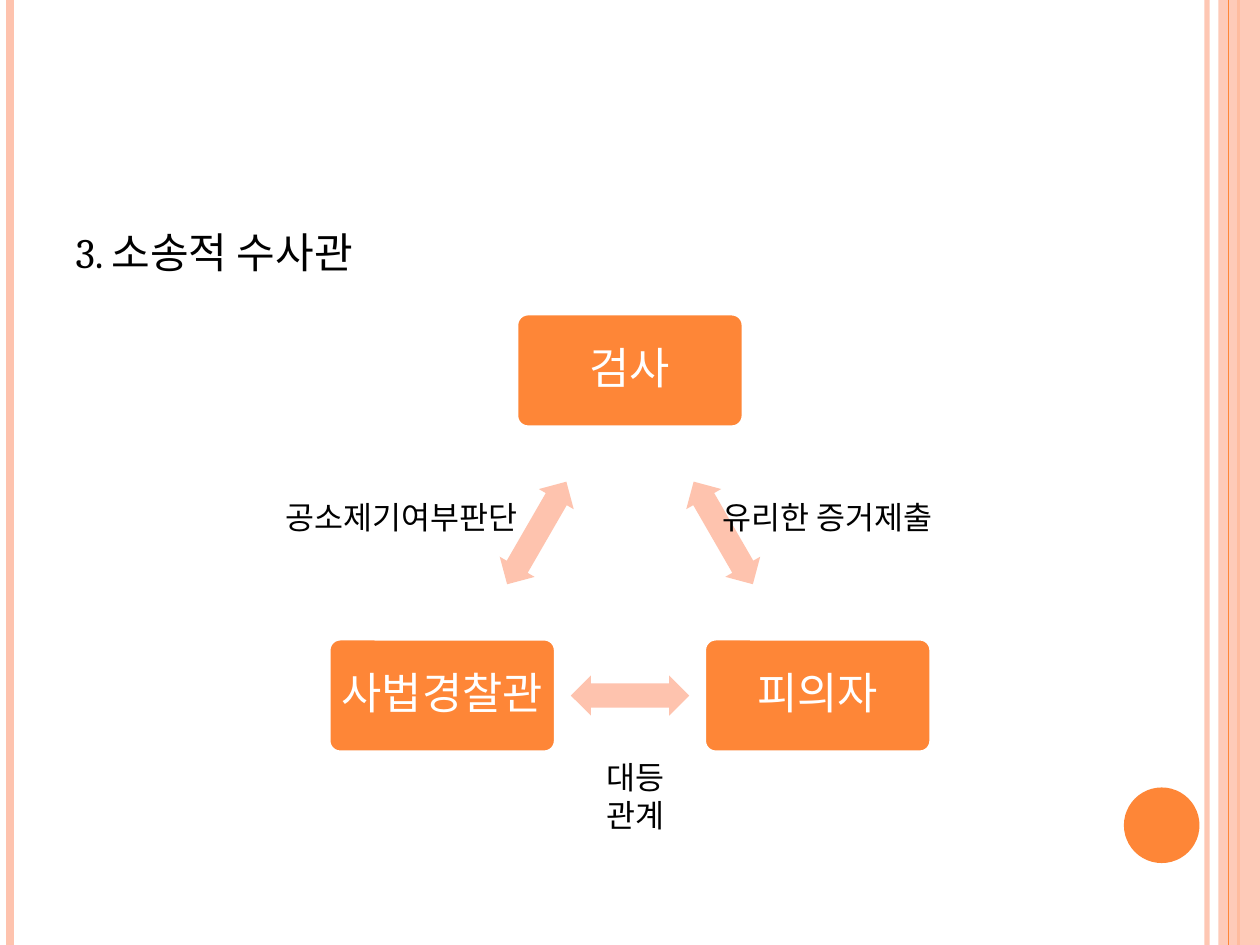
"""Build a slide on the litigation view of criminal investigation."""
from typing import NamedTuple

from lxml import etree
from pptx import Presentation
from pptx.dml.color import RGBColor
from pptx.enum.shapes import MSO_CONNECTOR, MSO_SHAPE
from pptx.enum.text import MSO_ANCHOR, PP_ALIGN
from pptx.oxml.ns import qn
from pptx.util import Inches, Pt

ORANGE = RGBColor(0xFE, 0x86, 0x37)
PEACH = RGBColor(0xFE, 0xC3, 0xAE)
WHITE = RGBColor(0xFF, 0xFF, 0xFF)
BLACK = RGBColor(0, 0, 0)
FONT = "Cambria"
RECT, OVAL = MSO_SHAPE.RECTANGLE, MSO_SHAPE.OVAL
ROUND, ARROW = MSO_SHAPE.ROUNDED_RECTANGLE, MSO_SHAPE.LEFT_RIGHT_ARROW
LINE = MSO_CONNECTOR.STRAIGHT
CENTER, LEFT = PP_ALIGN.CENTER, PP_ALIGN.LEFT
MIDDLE = MSO_ANCHOR.MIDDLE
HIGH = 7.5


class Rail(NamedTuple):
    x: float
    color: RGBColor
    width: float
    alpha: int = 100


class Area(NamedTuple):
    x: float
    y: float
    w: float
    h: float


class Party(NamedTuple):
    name: str
    x: float
    y: float


class Link(NamedTuple):
    x: float
    y: float
    angle: int


class Label(NamedTuple):
    text: str
    area: Area


RAILS = [
    Rail(9.58, PEACH, 3, 93),
    Rail(0.08, PEACH, 4.5),
    Rail(9.83, ORANGE, 1.5),
    Rail(9.75, ORANGE, 0.75),
]
BAND = Area(9.67, 0, 0.33, HIGH)
DOT = Area(8.92, 6.25, 0.6, 0.6)
PARTIES = [
    Party("검사", 4.1, 2.49),
    Party("피의자", 5.59, 5.07),
    Party("사법경찰관", 2.61, 5.07),
]
LINKS = [Link(5.27, 4.07, 60), Link(4.53, 5.36, 180), Link(3.79, 4.07, 300)]
LABELS = [
    Label("유리한 증거제출", Area(5.47, 3.91, 2.2, 0.39)),
    Label("공소제기여부판단", Area(2.09, 3.91, 2.2, 0.39)),
    Label("대등\n관계", Area(4.61, 5.88, 0.87, 0.87)),
]


def place(area: Area) -> list:
    return [Inches(side) for side in area]


def fade(shape, alpha: int) -> None:
    color = next(shape._element.spPr.iter(qn("a:srgbClr")))
    etree.SubElement(color, qn("a:alpha")).set("val", str(alpha * 1000))


def write(frame, text: str, size: float, color: RGBColor, align=CENTER) -> None:
    frame.word_wrap = True
    frame.text = text
    for para in frame.paragraphs:
        para.alignment = align
        para.font.name = FONT
        para.font.size = Pt(size)
        para.font.color.rgb = color


def add_shape(slide, kind, area: Area, color: RGBColor):
    shape = slide.shapes.add_shape(kind, *place(area))
    shape.shadow.inherit = False
    shape.fill.solid()
    shape.fill.fore_color.rgb = color
    shape.line.fill.background()
    return shape


def add_rail(slide, rail: Rail) -> None:
    x = Inches(rail.x)
    line = slide.shapes.add_connector(LINE, x, 0, x, Inches(HIGH))
    line.line.color.rgb = rail.color
    line.line.width = Pt(rail.width)
    etree.SubElement(line._element.spPr, qn("a:effectLst"))
    if rail.alpha < 100:
        fade(line, rail.alpha)


def add_party(slide, party: Party) -> None:
    box = add_shape(slide, ROUND, Area(party.x, party.y, 1.8, 0.9), ORANGE)
    box.adjustments[0] = 0.1
    box.line.color.rgb = WHITE
    box.line.width = Pt(2)
    frame = box.text_frame
    frame.margin_left = frame.margin_right = Inches(0.06)
    frame.vertical_anchor = MIDDLE
    write(frame, party.name, 25, WHITE)
    frame.paragraphs[0].line_spacing = 0.9


def add_link(slide, link: Link) -> None:
    arrow = add_shape(slide, ARROW, Area(link.x, link.y, 0.94, 0.32), PEACH)
    arrow.adjustments[0] = 0.6
    arrow.adjustments[1] = 0.5
    arrow.rotation = link.angle


def add_label(slide, label: Label) -> None:
    frame = slide.shapes.add_textbox(*place(label.area)).text_frame
    frame.vertical_anchor = MIDDLE
    write(frame, label.text, 18, BLACK)


def fill_body(body) -> None:
    body.left, body.top, body.width, body.height = place(Area(0.5, 1.75, 8.17, 5.33))
    write(body.text_frame, "3. 소송적 수사관", 24, BLACK, LEFT)
    para = body.text_frame.paragraphs[0]
    para.space_before = Pt(6)
    props = para._p.get_or_add_pPr()
    props.set("marL", str(Inches(0.3)))
    props.set("indent", str(Inches(-0.3)))
    props.insert_element_before(
        props.makeelement(qn("a:buNone")), "a:tabLst", "a:defRPr", "a:extLst"
    )


def main() -> None:
    deck = Presentation()
    deck.slide_width, deck.slide_height = Inches(10), Inches(HIGH)
    slide = deck.slides.add_slide(deck.slide_layouts[1])
    title = slide.shapes.title._element
    title.getparent().remove(title)
    fill_body(slide.placeholders[1])
    for rail in RAILS[:3]:
        add_rail(slide, rail)
    fade(add_shape(slide, RECT, BAND, PEACH), 87)
    add_rail(slide, RAILS[3])
    add_shape(slide, OVAL, DOT, ORANGE)
    for party in PARTIES:
        add_party(slide, party)
    for link in LINKS:
        add_link(slide, link)
    for label in LABELS:
        add_label(slide, label)
    deck.save("out.pptx")


if __name__ == "__main__":
    main()
